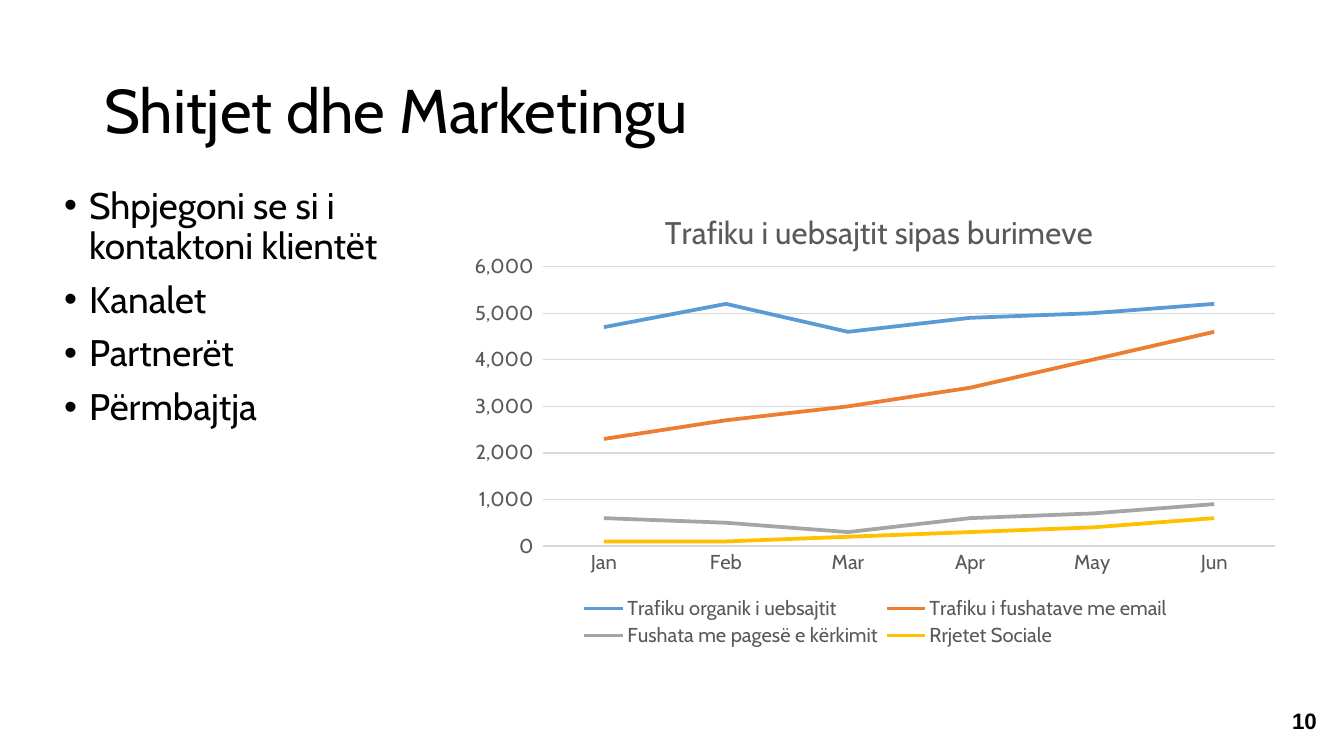
"""Build the sales and marketing slide with its website traffic chart."""
from lxml import etree
from pptx import Presentation
from pptx.chart import data
from pptx.dml.color import RGBColor
from pptx.enum import chart as kinds, text
from pptx.oxml import parse_xml
from pptx.oxml.ns import nsdecls, qn
from pptx.util import Pt

COLORS = {"ink": "000000", "label": "595959", "grid": "D9D9D9", "organic": "5B9BD5",
          "email": "ED7D31", "paid": "A5A5A5", "social": "FFC000"}
MONTHS = ["Jan", "Feb", "Mar", "Apr", "May", "Jun"]
SOURCES = [
    ("Trafiku organik i uebsajtit", "organic", [4700, 5200, 4600, 4900, 5000, 5200]),
    ("Trafiku i fushatave me email", "email", [2300, 2700, 3000, 3400, 4000, 4600]),
    ("Fushata me pagesë e kërkimit", "paid", [600, 500, 300, 600, 700, 900]),
    ("Rrjetet Sociale", "social", [100, 100, 200, 300, 400, 600]),
]
TOPICS = ["Shpjegoni se si i kontaktoni klientët", "Kanalet", "Partnerët", "Përmbajtja"]


def style(font, size, color, name="Cabin", bold=False):
    for key, value in {"size": Pt(size), "name": name, "bold": bold}.items():
        setattr(font, key, value)
    font.color.rgb = RGBColor.from_string(COLORS[color])


def place(part, x, y, w=None, h=None, inner=False):
    for old in part.findall(qn("c:layout")):
        part.remove(old)
    target = '<c:layoutTarget val="inner"/>' if inner else ""
    modes = '<c:xMode val="edge"/><c:yMode val="edge"/>'
    sizes = [(k, v) for k, v in zip("xywh", (x, y, w, h)) if v is not None]
    spots = "".join(f'<c:{k} val="{v}"/>' for k, v in sizes)
    layout = parse_xml(f'<c:layout {nsdecls("c")}><c:manualLayout>{target}{modes}{spots}'
                       '</c:manualLayout></c:layout>')
    leading = [e for e in part if e.tag in (qn("c:tx"), qn("c:legendPos"))]
    part.insert(len(leading), layout)


deck = Presentation()
deck.slide_width, deck.slide_height = Pt(800), Pt(450)
slide = deck.slides.add_slide(deck.slide_layouts[5])

heading = slide.shapes.title
for key, value in {"left": 54.7, "top": 23.8, "width": 690, "height": 87}.items():
    setattr(heading, key, Pt(value))
heading.text_frame.text = "Shitjet dhe Marketingu"
heading.text_frame.vertical_anchor = text.MSO_ANCHOR.MIDDLE
heading_line = heading.text_frame.paragraphs[0]
heading_line.alignment, heading_line.line_spacing = text.PP_ALIGN.LEFT, 0.9
style(heading_line.runs[0].font, 36.7, "ink")

topics = slide.shapes.add_textbox(Pt(31), Pt(108), Pt(209.5), Pt(282)).text_frame
topics.word_wrap = True
topics.text = "\n".join(TOPICS)
for topic in topics.paragraphs:
    topic.line_spacing, topic.space_before = 0.9, Pt(8.3)
    style(topic.runs[0].font, 22, "ink")
    layout = topic._p.get_or_add_pPr()
    layout.set("marL", str(Pt(15)))
    layout.set("indent", str(-Pt(15)))
    etree.SubElement(layout, qn("a:buFont")).set("typeface", "Arial")
    etree.SubElement(layout, qn("a:buChar")).set("char", "•")

traffic = data.CategoryChartData(number_format="#,##0")
traffic.categories = MONTHS
for name, color, visits in SOURCES:
    traffic.add_series(name, visits)
chart = slide.shapes.add_chart(kinds.XL_CHART_TYPE.LINE, Pt(273.6), Pt(108),
                               Pt(495.4), Pt(282), traffic).chart
style(chart.font, 10, "ink")
chart.plots[0].vary_by_categories = False
for series, (name, color, visits) in zip(chart.plots[0].series, SOURCES):
    series.smooth = False
    series.marker.style = kinds.XL_MARKER_STYLE.NONE
    series.format.line.width = Pt(2.25)
    series.format.line.color.rgb = RGBColor.from_string(COLORS[color])

chart.has_title = True
chart.chart_title.include_in_layout = False
chart.chart_title.text_frame.text = "Trafiku i uebsajtit sipas burimeve"
style(chart.chart_title.text_frame.paragraphs[0].runs[0].font, 18.6, "label")

months, visits_axis = chart.category_axis, chart.value_axis
for axis in (months, visits_axis):
    axis.major_tick_mark = axis.minor_tick_mark = kinds.XL_TICK_MARK.NONE
    style(axis.tick_labels.font, 12, "label")
visits_axis.minimum_scale, visits_axis.maximum_scale = 0, 6000
visits_axis.major_unit = 1000
visits_axis.tick_labels.number_format = r"#,##0_);\(#,##0\)"
visits_axis.tick_labels.number_format_is_linked = False
visits_axis.format.line.fill.background()
for line in (months.format.line, visits_axis.major_gridlines.format.line):
    line.width = Pt(0.75)
    line.color.rgb = RGBColor.from_string(COLORS["grid"])

chart.has_legend = True
chart.legend.position = kinds.XL_LEGEND_POSITION.BOTTOM
chart.legend.include_in_layout = False
style(chart.legend.font, 12, "label")

chart_area = chart._chartSpace.chart
place(chart_area.find(qn("c:title")), 0.24, 0.05)
place(chart_area.plotArea, 0.1, 0.18, 0.88, 0.59, inner=True)
place(chart_area.find(qn("c:legend")), 0.14, 0.87, 0.72, 0.12)

page = slide.shapes.add_textbox(Pt(753), Pt(422), Pt(47), Pt(15)).text_frame
for key in ("margin_left", "margin_top", "margin_right", "margin_bottom"):
    setattr(page, key, 0)
page.word_wrap, page.vertical_anchor = True, text.MSO_ANCHOR.BOTTOM
page.text = "10"
page.paragraphs[0].alignment = text.PP_ALIGN.CENTER
style(page.paragraphs[0].runs[0].font, 13.3, "ink", "Arial", True)

deck.save("out.pptx")
